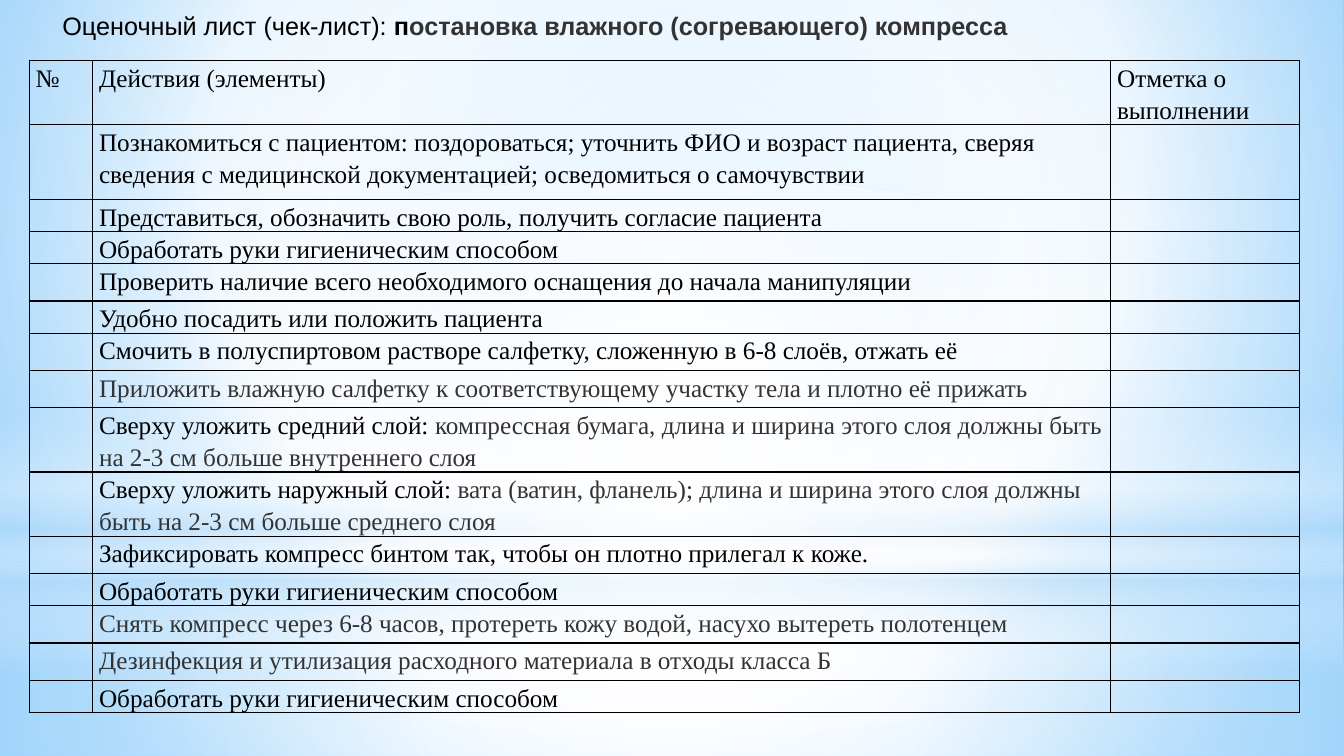
"""Build the checklist slide on applying a warming compress."""
from dataclasses import dataclass

from lxml import etree
from pptx import Presentation
from pptx import util as u
from pptx.dml.color import RGBColor
from pptx.enum import shapes, text
from pptx.oxml.ns import qn

BLACK, GREY = "000000", "333333"
HANDS = "Обработать руки гигиеническим способом"
SINGLE, TALL, DOUBLE = 22.9, 26.7, 45.7


@dataclass(frozen=True)
class Run:
    content: str
    colour: str = BLACK
    bold: bool = False


@dataclass(frozen=True)
class Stop:
    position: int
    colour: str
    alpha: int = 100


@dataclass(frozen=True)
class Gradient:
    stops: tuple[Stop, ...]
    focus: tuple[int, int, int, int] | None = (50, 50, 50, 50)


@dataclass(frozen=True)
class Glow:
    kind: shapes.MSO_SHAPE
    top: float
    height: float
    gradient: Gradient


@dataclass(frozen=True)
class Step:
    height: float
    runs: tuple[Run, ...]
    number: str = ""
    mark: str = ""


WHITE, BLUE = "FFFFFF", "B4DCFA"
BACKGROUND = Gradient((Stop(0, "9ED5FF"), Stop(60, WHITE), Stop(100, "5BB9FF")), (20, 10, 20, 60))
RECTANGLE, OVAL = shapes.MSO_SHAPE.RECTANGLE, shapes.MSO_SHAPE.OVAL
GLOWS = (
    Glow(RECTANGLE, 402, 138, Gradient((Stop(0, WHITE, 91), Stop(37, WHITE, 76), Stop(100, BLUE, 79)))),
    Glow(RECTANGLE, 0, 402, Gradient((Stop(0, WHITE, 89), Stop(48, WHITE, 62), Stop(100, BLUE, 79)))),
    Glow(RECTANGLE, 296.6, 180, Gradient((
        Stop(0, WHITE, 0), Stop(29, WHITE, 30), Stop(45, BLUE, 40),
        Stop(55, WHITE, 26), Stop(65, BLUE, 60), Stop(100, WHITE, 0)), None)),
    Glow(OVAL, 126, 402, Gradient((Stop(0, WHITE), Stop(56, WHITE, 0)))),
)
TITLE = (
    Run("Оценочный лист (чек-лист): "),
    Run("п", bold=True),
    Run("остановка влажного (согревающего) компресса", GREY, True),
)
COLUMNS = (45.4, 727.2, 134.6)
STEPS = (
    Step(DOUBLE, (Run("Действия (элементы)"),), "№", "Отметка о выполнении"),
    Step(53.5, (Run("Познакомиться с пациентом: поздороваться; уточнить ФИО и возраст пациента, сверяя "
                    "сведения с медицинской документацией; осведомиться о самочувствии"),)),
    Step(SINGLE, (Run("Представиться, обозначить свою роль, получить согласие пациента"),)),
    Step(SINGLE, (Run(HANDS),)),
    Step(TALL, (Run("Проверить наличие всего необходимого оснащения до начала манипуляции"),)),
    Step(SINGLE, (Run("Удобно посадить или положить пациента"),)),
    Step(TALL, (Run("Смочить в полуспиртовом растворе салфетку, сложенную в 6-8 слоёв, отжать её"),)),
    Step(TALL, (Run("Приложить влажную салфетку к соответствующему участку тела и плотно её прижать", GREY),)),
    Step(DOUBLE, (Run("Сверху уложить средний слой: "),
                  Run("компрессная бумага, длина и ширина этого слоя должны быть "
                      "на 2-3 см больше внутреннего слоя", GREY))),
    Step(DOUBLE, (Run("Сверху уложить наружный слой: "),
                  Run("вата (ватин, фланель); длина и ширина этого слоя должны "
                      "быть на 2-3 см больше среднего слоя", GREY))),
    Step(TALL, (Run("Зафиксировать компресс бинтом так, чтобы он плотно прилегал к коже."),)),
    Step(SINGLE, (Run(HANDS),)),
    Step(TALL, (Run("Снять компресс через 6-8 часов, протереть кожу водой, насухо вытереть полотенцем", GREY),)),
    Step(TALL, (Run("Дезинфекция и утилизация расходного материала в отходы класса Б", GREY),)),
    Step(SINGLE, (Run(HANDS),)),
)


def rgb(colour: str) -> RGBColor:
    return RGBColor.from_string(colour)


def child(parent, tag: str, **attributes):
    return etree.SubElement(parent, qn(tag), {key: str(value) for key, value in attributes.items()})


def fill_gradient(owner, fill, gradient: Gradient) -> None:
    fill.gradient()
    element = next(owner.element.iter(qn("a:gradFill")))
    for part in list(element):
        element.remove(part)
    stops = child(element, "a:gsLst")
    for stop in gradient.stops:
        colour = child(child(stops, "a:gs", pos=stop.position * 1000), "a:srgbClr", val=stop.colour)
        if stop.alpha < 100:
            child(colour, "a:alpha", val=stop.alpha * 1000)
    if gradient.focus is None:
        child(element, "a:lin", ang=90 * 60000, scaled=0)
    else:
        sides = {side: value * 1000 for side, value in zip("ltrb", gradient.focus)}
        child(child(element, "a:path", path="circle"), "a:fillToRect", **sides)


def add_runs(paragraph, runs: tuple[Run, ...], font_name: str) -> None:
    for item in runs:
        run = paragraph.add_run()
        run.text = item.content
        run.font.name = font_name
        run.font.size = u.Pt(18)
        run.font.bold = item.bold
        run.font.color.rgb = rgb(item.colour)


def add_glow(slide, glow: Glow) -> None:
    shape = slide.shapes.add_shape(glow.kind, 0, u.Pt(glow.top), u.Pt(960), u.Pt(glow.height))
    shape.shadow.inherit = False
    shape.line.fill.background()
    fill_gradient(shape, shape.fill, glow.gradient)


def format_cell(cell, runs: tuple[Run, ...]) -> None:
    cell.margin_left = cell.margin_right = u.Pt(4.5)
    cell.margin_top = cell.margin_bottom = 0
    properties = cell._tc.get_or_add_tcPr()
    for side in ("a:lnL", "a:lnR", "a:lnT", "a:lnB"):
        border = child(properties, side, w=u.Pt(1))
        child(child(border, "a:solidFill"), "a:srgbClr", val=BLACK)
    cell.fill.background()
    paragraph = cell.text_frame.paragraphs[0]
    paragraph.line_spacing = 1.15
    add_runs(paragraph, runs, "Times New Roman")


def add_checklist(slide) -> None:
    frame = slide.shapes.add_table(len(STEPS), len(COLUMNS), u.Pt(20.9), u.Pt(43.2),
                                   u.Pt(sum(COLUMNS)), u.Pt(sum(step.height for step in STEPS)))
    table = frame.table
    table.first_row = table.horz_banding = False
    for column, width in zip(table.columns, COLUMNS):
        column.width = u.Pt(width)
    for row, step in zip(table.rows, STEPS):
        row.height = u.Pt(step.height)
        number = (Run(step.number),) if step.number else ()
        mark = (Run(step.mark),) if step.mark else ()
        for cell, runs in zip(row.cells, (number, step.runs, mark)):
            format_cell(cell, runs)


def format_title(slide) -> None:
    title = slide.shapes.title
    title.left, title.top, title.width, title.height = (u.Pt(value) for value in (37.4, 3.6, 890, 51))
    frame = title.text_frame
    frame.word_wrap = True
    frame.auto_size = text.MSO_AUTO_SIZE.NONE
    frame.vertical_anchor = text.MSO_ANCHOR.TOP
    paragraph = frame.paragraphs[0]
    paragraph.alignment = text.PP_ALIGN.LEFT
    add_runs(paragraph, TITLE, "Arial")
    title.element.getparent().append(title.element)


def main() -> None:
    presentation = Presentation()
    presentation.slide_width, presentation.slide_height = u.Pt(960), u.Pt(540)
    slide = presentation.slides.add_slide(presentation.slide_layouts[5])
    fill_gradient(slide, slide.background.fill, BACKGROUND)
    for glow in GLOWS:
        add_glow(slide, glow)
    add_checklist(slide)
    format_title(slide)
    presentation.save("out.pptx")


if __name__ == "__main__":
    main()
